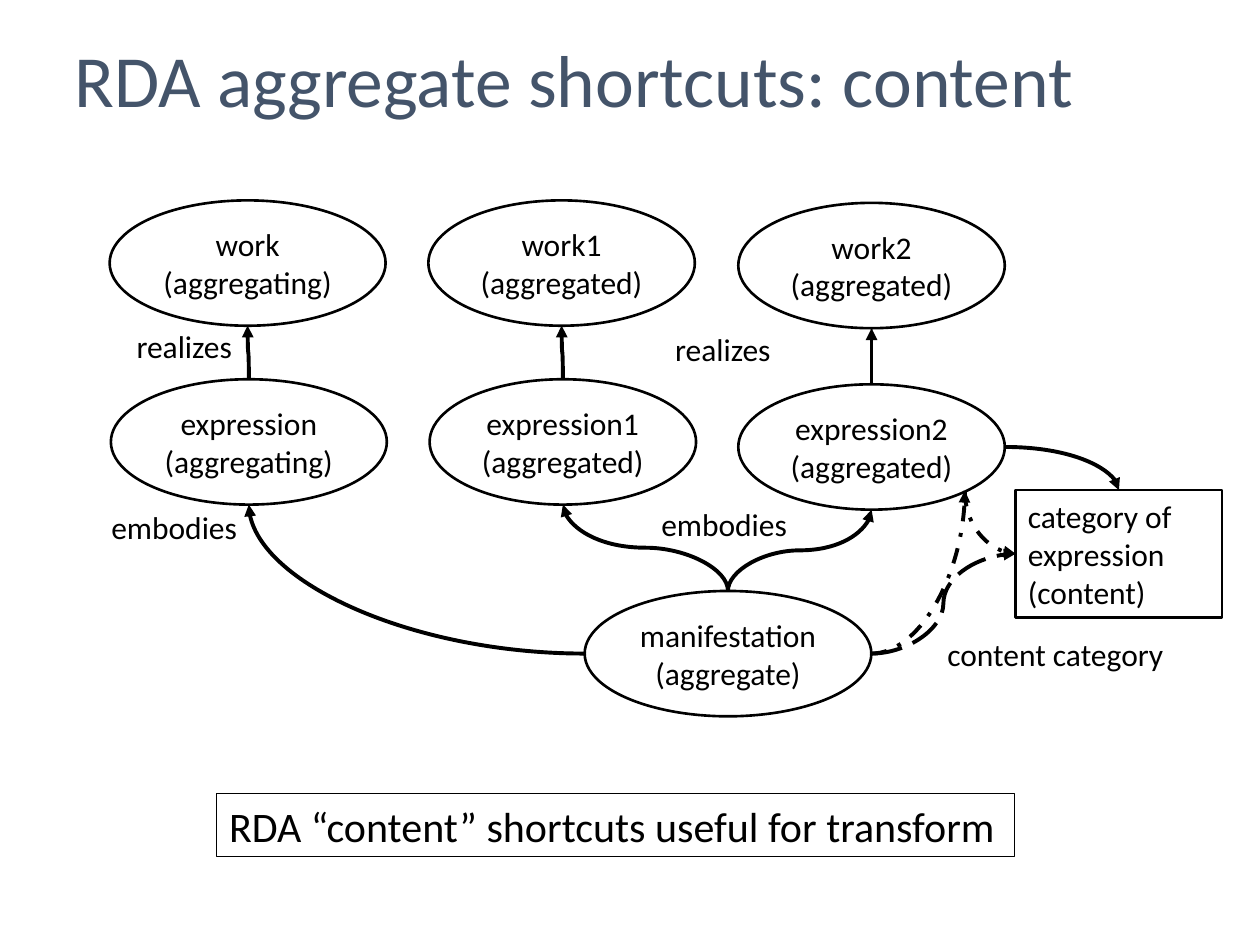
from dataclasses import dataclass

from lxml import etree
from pptx import Presentation
from pptx.dml.color import RGBColor
from pptx.enum.dml import MSO_LINE
from pptx.enum.shapes import MSO_CONNECTOR, MSO_SHAPE
from pptx.enum.text import MSO_ANCHOR, PP_ALIGN
from pptx.oxml.ns import qn
from pptx.util import Inches, Pt

ELLIPSE, RECTANGLE = MSO_SHAPE.OVAL, MSO_SHAPE.RECTANGLE
CURVE = MSO_CONNECTOR.CURVE
LEFT_ALIGN, CENTER, RIGHT_ALIGN = PP_ALIGN.LEFT, PP_ALIGN.CENTER, PP_ALIGN.RIGHT
TOP_ANCHOR, MIDDLE = MSO_ANCHOR.TOP, MSO_ANCHOR.MIDDLE
SOLID, DASH_DOT, LONG_DASH = MSO_LINE.SOLID, MSO_LINE.DASH_DOT, MSO_LINE.LONG_DASH

TOP, LEFT, BOTTOM, RIGHT = (0.5, 0), (0, 0.5), (0.5, 1), (1, 0.5)
LOWER_RIGHT = (0.85, 0.85)
COLUMNS, ROWS = 100, 75


@dataclass(frozen=True)
class Theme:
    font: str = "Calibri"
    ink: RGBColor = RGBColor(0x00, 0x00, 0x00)
    heading: RGBColor = RGBColor(0x44, 0x54, 0x6A)
    title_size: float = 42
    note_size: float = 24
    body_size: float = 18
    thin: float = 0.75
    outline: float = 1.5
    arrow: float = 2.25


class Diagram:
    def __init__(self, deck, theme):
        self.theme = theme
        self.slide = deck.slides.add_slide(deck.slide_layouts[6])
        self.column = deck.slide_width / COLUMNS
        self.row = deck.slide_height / ROWS

    def place(self, left, top, width, height):
        return (round(left * self.column), round(top * self.row),
                round(width * self.column), round(height * self.row))

    def set_text(self, shape, lines, size, color, align, wrap, anchor):
        frame = shape.text_frame
        frame.word_wrap = wrap
        frame.vertical_anchor = anchor
        frame.text = "\n".join(lines)
        for para in frame.paragraphs:
            para.alignment = align
            para.font.name = self.theme.font
            para.font.size = Pt(size)
            para.font.color.rgb = color

    def label(self, text, area, align=LEFT_ALIGN, wrap=True, size=None, color=None):
        box = self.slide.shapes.add_textbox(*self.place(*area))
        self.set_text(box, [text], size or self.theme.body_size,
                      color or self.theme.ink, align, wrap, TOP_ANCHOR)

    def node(self, kind, lines, area, align=CENTER, wrap=False, size=None, weight=None):
        shape = self.slide.shapes.add_shape(kind, *self.place(*area))
        shape.shadow.inherit = False
        shape.fill.background()
        shape.line.color.rgb = self.theme.ink
        shape.line.width = Pt(weight or self.theme.outline)
        self.set_text(shape, lines, size or self.theme.body_size,
                      self.theme.ink, align, wrap, MIDDLE)
        return shape

    def entity(self, name, role, left, top, width):
        return self.node(ELLIPSE, [name, f"({role})"], (left, top, width, 9.95))

    def arrow(self, source, source_side, target, target_side, dash=SOLID):
        (x1, y1), (x2, y2) = [
            (shape.left + shape.width * across, shape.top + shape.height * down)
            for shape, (across, down) in ((source, source_side), (target, target_side))]
        upright = source_side in (TOP, BOTTOM, LOWER_RIGHT)
        ends_upright = target_side in (TOP, BOTTOM, LOWER_RIGHT)
        run, rise = (y1 - y2, x2 - x1) if upright else (x2 - x1, y2 - y1)
        middle_x, middle_y = (x1 + x2) / 2, (y1 + y2) / 2
        curve = self.slide.shapes.add_connector(
            CURVE, round(middle_x - run / 2), round(middle_y - rise / 2),
            round(middle_x + run / 2), round(middle_y + rise / 2))
        curve.line.color.rgb = self.theme.ink
        curve.line.width = Pt(self.theme.arrow)
        curve.line.dash_style = dash
        properties = curve._element.spPr
        if upright:
            properties.find(qn("a:xfrm")).set("rot", str(270 * 60000))
        if upright != ends_upright:
            properties.find(qn("a:prstGeom")).set("prst", "curvedConnector2")
        etree.SubElement(properties.find(qn("a:ln")), qn("a:tailEnd"), type="triangle")
        etree.SubElement(properties, qn("a:effectLst"))


def main():
    deck = Presentation()
    deck.slide_width, deck.slide_height = Inches(10), Inches(7.5)
    theme = Theme()
    diagram = Diagram(deck, theme)

    diagram.label("RDA aggregate shortcuts: content", (4.9, 2.2, 84.2, 8.1),
                  wrap=False, size=theme.title_size, color=theme.heading)

    manifestation = diagram.entity("manifestation", "aggregate", 46.4, 46.9, 22.75)
    expressions = []
    for suffix, role, width, work_at, expression_at in (
            ("", "aggregating", 21.9, (8.7, 15.9), (8.8, 30.1)),
            ("1", "aggregated", 21.15, (34, 15.9), (34.1, 30.1)),
            ("2", "aggregated", 21.15, (58.6, 16.1), (58.6, 30.5))):
        work = diagram.entity("work" + suffix, role, *work_at, width)
        expression = diagram.entity("expression" + suffix, role, *expression_at, width)
        diagram.arrow(expression, TOP, work, BOTTOM)
        expressions.append(expression)
    aggregating, first, second = expressions

    category = diagram.node(RECTANGLE, ["category of expression", "(content)"],
                            (80.6, 38.9, 16.4, 10.1), align=LEFT_ALIGN, wrap=True)

    diagram.arrow(manifestation, LEFT, aggregating, BOTTOM)
    diagram.arrow(manifestation, TOP, first, BOTTOM)
    diagram.arrow(manifestation, TOP, second, BOTTOM)
    diagram.arrow(second, RIGHT, category, TOP)
    diagram.arrow(manifestation, RIGHT, second, LOWER_RIGHT, DASH_DOT)
    diagram.arrow(second, LOWER_RIGHT, category, LEFT, DASH_DOT)
    diagram.arrow(manifestation, RIGHT, category, LEFT, LONG_DASH)

    diagram.label("realizes", (9.1, 25.5, 10.3, 4), RIGHT_ALIGN)
    diagram.label("realizes", (52.6, 25.7, 10.3, 4))
    diagram.label("embodies", (6.8, 39.8, 13, 4), RIGHT_ALIGN)
    diagram.label("embodies", (51.5, 39.6, 13, 4))
    diagram.label("content category", (74.2, 49.9, 19.4, 4), wrap=False)

    diagram.node(RECTANGLE, ["RDA “content” shortcuts useful for transform"],
                 (17.2, 63, 63.3, 5), align=LEFT_ALIGN,
                 size=theme.note_size, weight=theme.thin)

    deck.save("out.pptx")


if __name__ == "__main__":
    main()
